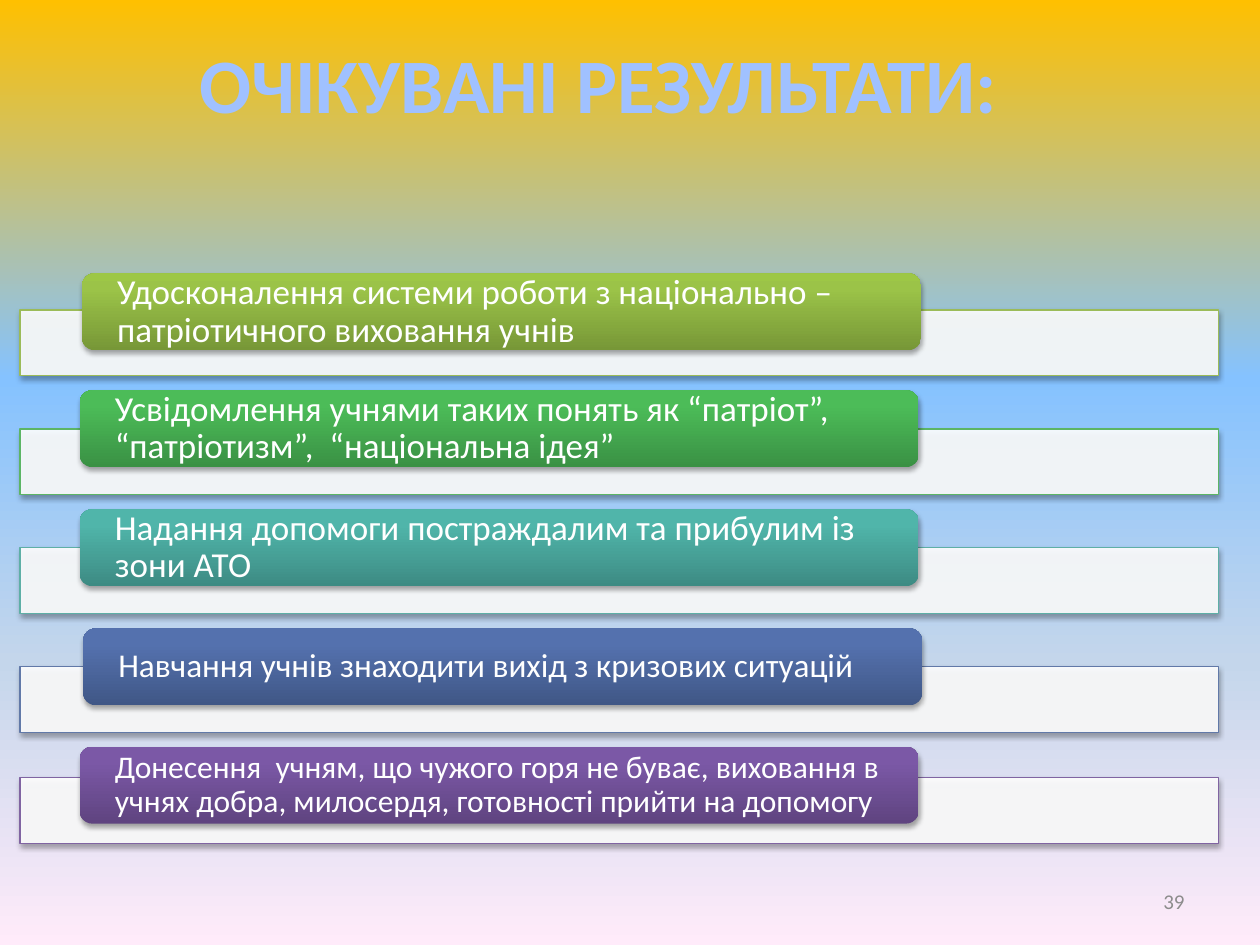
from dataclasses import dataclass

from lxml.etree import SubElement
from pptx import Presentation
from pptx.dml.color import RGBColor
from pptx.enum.shapes import MSO_SHAPE
from pptx.enum.text import MSO_ANCHOR, PP_ALIGN
from pptx.oxml.ns import qn
from pptx.util import Pt

FONT = "Calibri"
BAR_LEFT, BAR_WIDTH, BAR_HIGH = 11.5, 684.7, 37.6
TAB_WIDTH, TAB_HIGH = 479.5, 44


@dataclass
class Goal:
    text: str
    size: int
    left: float
    top: float
    bar_top: float
    line: str
    shades: tuple[str, str, str]


GOALS = [
    Goal("Удосконалення системи роботи з національно – патріотичного виховання учнів",
         20, 46.8, 156.2, 177.1, "9BBB59", ("779737", "9BC348", "9DC746")),
    Goal("Усвідомлення учнями таких понять як “патріот”, “патріотизм”,  “національна ідея”",
         20, 45.5, 223, 245.2, "5CB565", ("3A9144", "4CBC58", "4ABF57")),
    Goal("Надання допомоги постраждалим та прибулим із зони АТО",
         20, 45.5, 291, 313, "5EAFA6", ("3D8B83", "50B5AA", "4EB8AC")),
    Goal("Навчання учнів знаходити вихід з кризових ситуацій",
         19, 47.5, 359.1, 381, "6179A8", ("405786", "5471AE", "5271B0")),
    Goal("Донесення  учням, що чужого горя не буває, виховання в учнях добра, "
         "милосердя, готовності прийти на допомогу",
         18, 45.5, 426.7, 444.4, "8064A2", ("5F4480", "7B58A6", "7C57A8")),
]


def color(code: str) -> RGBColor:
    return RGBColor.from_string(code)


def blend(root, fill, stops: list[tuple[int, str]], angle: int) -> None:
    """Give the fill inside root a gradient of (percent, colour) stops."""
    fill.gradient()
    fill.gradient_angle = angle
    marks = next(root.iter(qn("a:gsLst")))
    marks.clear()
    for place, code in stops:
        mark = SubElement(marks, qn("a:gs"), pos=str(place * 1000))
        SubElement(mark, qn("a:srgbClr"), val=code)


def shade(shape) -> None:
    """Add the soft shadow that falls straight down."""
    shape.shadow.inherit = False
    effects = next(shape.element.iter(qn("a:effectLst")))
    outer = SubElement(effects, qn("a:outerShdw"), blurRad=str(Pt(3.1)),
                       dist=str(Pt(1.8)), dir="5400000", rotWithShape="0")
    black = SubElement(outer, qn("a:srgbClr"), val="000000")
    SubElement(black, qn("a:alpha"), val="35000")


def write(frame, text: str, size: int, code: str, align=PP_ALIGN.LEFT,
          anchor=MSO_ANCHOR.MIDDLE, bold: bool = False):
    frame.word_wrap = True
    frame.vertical_anchor = anchor
    para = frame.paragraphs[0]
    para.text = text
    para.alignment = align
    font = para.font
    font.name, font.size, font.bold = FONT, Pt(size), bold
    font.color.rgb = color(code)
    return para


def draw_bar(slide, goal: Goal) -> None:
    bar = slide.shapes.add_shape(MSO_SHAPE.RECTANGLE, Pt(BAR_LEFT), Pt(goal.bar_top),
                                 Pt(BAR_WIDTH), Pt(BAR_HIGH))
    bar.fill.solid()
    bar.fill.fore_color.rgb = color("FFFFFF")
    white = next(bar.element.iter(qn("a:srgbClr")))
    SubElement(white, qn("a:alpha"), val="90000")
    bar.line.color.rgb = color(goal.line)
    bar.line.width = Pt(0.75)
    shade(bar)


def draw_tab(slide, goal: Goal) -> None:
    tab = slide.shapes.add_shape(MSO_SHAPE.ROUNDED_RECTANGLE, Pt(goal.left),
                                 Pt(goal.top), Pt(TAB_WIDTH), Pt(TAB_HIGH))
    blend(tab.element, tab.fill, list(zip((0, 80, 100), goal.shades)), 90)
    tab.line.fill.background()
    shade(tab)
    frame = tab.text_frame
    frame.margin_left = frame.margin_right = Pt(18)
    frame.margin_top = frame.margin_bottom = 0
    write(frame, goal.text, goal.size, "FFFFFF").line_spacing = 0.9


def main() -> None:
    deck = Presentation()
    deck.slide_width, deck.slide_height = Pt(720), Pt(540)
    slide = deck.slides.add_slide(deck.slide_layouts[5])
    sky = [(0, "FFC000"), (40, "85C2FF"), (70, "C4D6EB"), (100, "FFEBFA")]
    blend(slide.element, slide.background.fill, sky, 270)

    title = slide.shapes.title
    title.left, title.top, title.width, title.height = Pt(106.6), Pt(17.3), Pt(613.4), Pt(60.5)
    write(title.text_frame, "ОЧІКУВАНІ РЕЗУЛЬТАТИ:", 44, "A0C1FF",
          anchor=MSO_ANCHOR.TOP, bold=True)

    for goal in GOALS:
        draw_bar(slide, goal)
        draw_tab(slide, goal)

    number = slide.shapes.add_textbox(Pt(516), Pt(500.5), Pt(168), Pt(28.8))
    write(number.text_frame, "39", 12, "8C8C8C", PP_ALIGN.RIGHT)
    deck.save("out.pptx")


if __name__ == "__main__":
    main()
